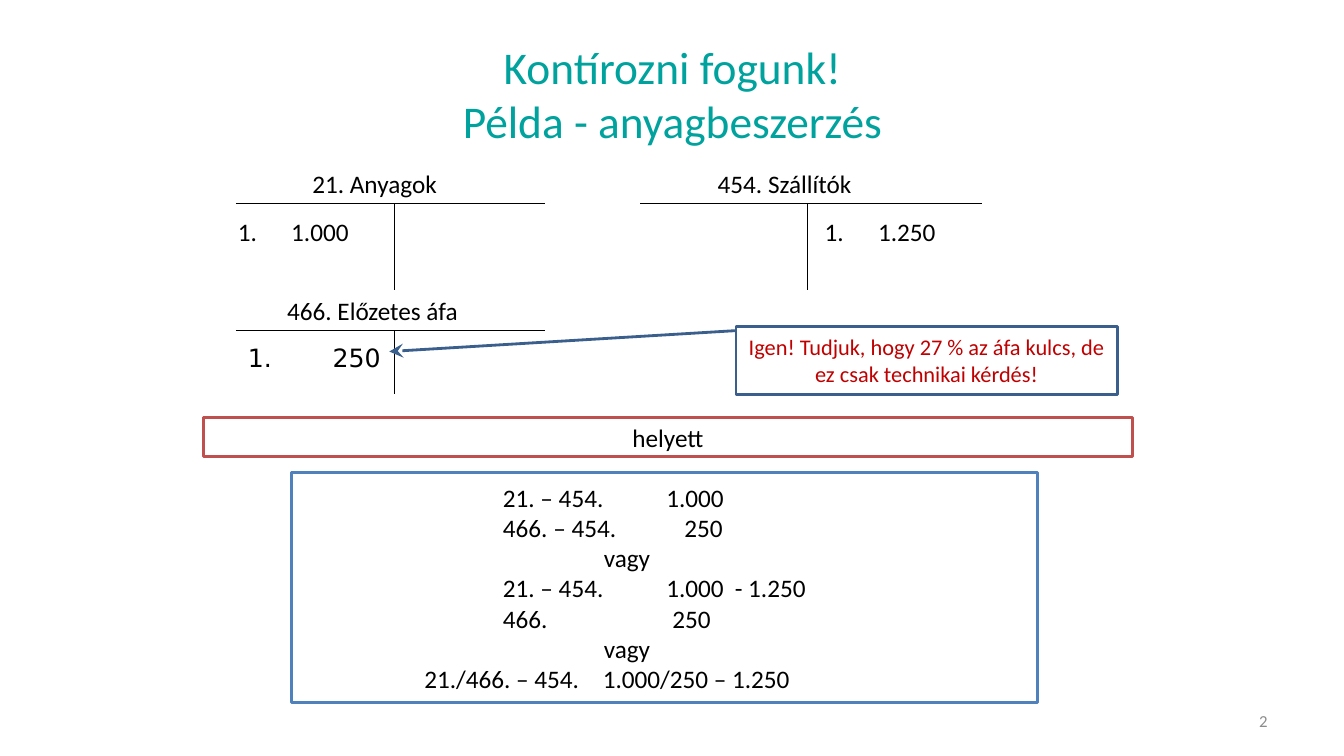
from lxml import etree
from pptx import Presentation
from pptx import util as u
from pptx.dml.color import RGBColor
from pptx.enum import shapes, text
from pptx.oxml.ns import qn

COLUMNS, ROWS = 133.3, 75  # grid cells are a tenth of an inch
LEFT, CENTER, RIGHT = text.PP_ALIGN.LEFT, text.PP_ALIGN.CENTER, text.PP_ALIGN.RIGHT
TOP, MIDDLE = text.MSO_ANCHOR.TOP, text.MSO_ANCHOR.MIDDLE


def color(hex_value):
    return RGBColor.from_string(hex_value)


def cell(count):
    return u.Inches(count / 10)


class Board:
    """Holds the text style and the current slide."""

    style = {"name": "Calibri", "size": 18, "color": "000000"}

    def __init__(self, slide):
        self.slide = slide

    def typeset(self, shape, lines, align=LEFT, anchor=TOP, wrap=True, tabs=(), **changes):
        style = {**self.style, **changes}
        frame = shape.text_frame
        for name, value in {"word_wrap": wrap, "vertical_anchor": anchor}.items():
            setattr(frame, name, value)
        for index, line in enumerate(lines):
            paragraph = frame.paragraphs[0] if index == 0 else frame.add_paragraph()
            paragraph.text = line
            paragraph.alignment = align
            for run in paragraph.runs:
                run.font.name = style["name"]
                run.font.size = u.Pt(style["size"])
                run.font.color.rgb = color(style["color"])
            if tabs:
                self.set_tabs(paragraph, tabs[index])
        return shape

    def set_tabs(self, paragraph, stops):
        tab_list = etree.SubElement(paragraph._p.get_or_add_pPr(), qn("a:tabLst"))
        for stop in stops:
            etree.SubElement(tab_list, qn("a:tab"), pos=str(cell(stop)), algn="l")

    def label(self, area, lines, **options):
        box = self.slide.shapes.add_textbox(*map(cell, area))
        return self.typeset(box, lines, **options)

    def panel(self, area, lines, outline, kind=shapes.MSO_SHAPE.RECTANGLE,
              fill="FFFFFF", **options):
        panel = self.slide.shapes.add_shape(kind, *map(cell, area))
        panel.shadow.inherit = False
        if fill:
            panel.fill.solid()
            panel.fill.fore_color.rgb = color(fill)
        else:
            panel.fill.background()
        panel.line.color.rgb = color(outline)
        panel.line.width = u.Pt(2)
        return self.typeset(panel, lines, anchor=MIDDLE, **options)

    def rule(self, x1, y1, x2, y2):
        rule = self.slide.shapes.add_connector(
            shapes.MSO_CONNECTOR.STRAIGHT, *map(cell, (x1, y1, x2, y2)))
        rule.line.color.rgb = color("000000")
        rule.line.width = u.Pt(0.75)
        etree.SubElement(rule._element.spPr, qn("a:effectLst"))

    def account(self, name, name_left, left, right, stem, top, depth):
        self.rule(left, top, right, top)
        self.rule(stem, top, stem, top + depth)
        self.label((name_left, top - 4, 20, 4), [name])

    def entry(self, left, top, amount):
        self.label((left, top, 13.2, 4), ["1.\t" + amount], tabs=[(5.3,)])


def main():
    deck = Presentation()
    deck.slide_width, deck.slide_height = cell(COLUMNS), cell(ROWS)
    board = Board(deck.slides.add_slide(deck.slide_layouts[6]))

    # Title
    board.label((6.7, 3, 120, 12.5), ["Kontírozni fogunk!\vPélda - anyagbeszerzés"],
                align=CENTER, anchor=MIDDLE, size=32.4, color="00A29E")

    # T-accounts
    board.account("21. Anyagok", 30, 23.4, 54.1, 39.1, 20.2, 8.6)
    board.account("454. Szállítók", 70.2, 63.5, 97.4, 80.1, 20.2, 8.6)
    board.account("466. Előzetes áfa", 27.5, 23.4, 54.1, 39.1, 32.8, 6.3)
    board.entry(22.6, 21, "1.000")
    board.entry(80.8, 21, "1.250")

    # Numbered VAT entry
    vat = board.label((23.2, 33.5, 15.9, 4), ["250"], name="DejaVu Sans")
    numbering = vat.text_frame.paragraphs[0]._p.get_or_add_pPr()
    numbering.set("marL", str(cell(8.8)))
    numbering.set("indent", str(cell(-8.4)))
    etree.SubElement(numbering, qn("a:buFont"), typeface="DejaVu Sans")
    etree.SubElement(numbering, qn("a:buAutoNum"), type="arabicPeriod")

    # Separator banner
    board.panel((20.2, 41.4, 92.1, 3.9), ["helyett"], "C0504D", align=CENTER)

    # Journal entries: each line with its tab stops
    journal = [
        ("\t21. – 454.\t1.000", (20, 36.2)),
        ("\t466. – 454.\t250", (20, 38)),
        ("\tvagy", (30,)),
        ("\t21. – 454.\t1.000\t- 1.250", (20, 36.2, 43)),
        ("\t466.\t250", (20, 36.8)),
        ("\tvagy", (30,)),
        ("\t21./466. – 454.\t1.000/250 – 1.250", (12.2, 29.9)),
    ]
    lines, stops = zip(*journal)
    board.panel((28.9, 46.9, 74, 22.8), lines, "4F81BD", tabs=stops)

    # Callout pointing at the VAT amount
    remark = board.panel(
        (73, 32.4, 37.8, 6.7),
        ["Igen! Tudjuk, hogy 27 % az áfa kulcs, de ez csak technikai kérdés!"],
        "3A5F8C", kind=shapes.MSO_SHAPE.LINE_CALLOUT_1, fill=None,
        align=CENTER, size=16, color="C00000")
    for index, share in enumerate((0.06, 0, 0.37, -0.91)):
        remark.adjustments[index] = share
    etree.SubElement(remark._element.spPr.get_or_add_ln(), qn("a:tailEnd"),
                     type="stealth", w="lg", len="lg")

    # Page number
    board.label((95.6, 69.5, 31.1, 4), ["2"], align=RIGHT, anchor=MIDDLE,
                size=12, color="8C8C8C")

    deck.save("out.pptx")


if __name__ == "__main__":
    main()
